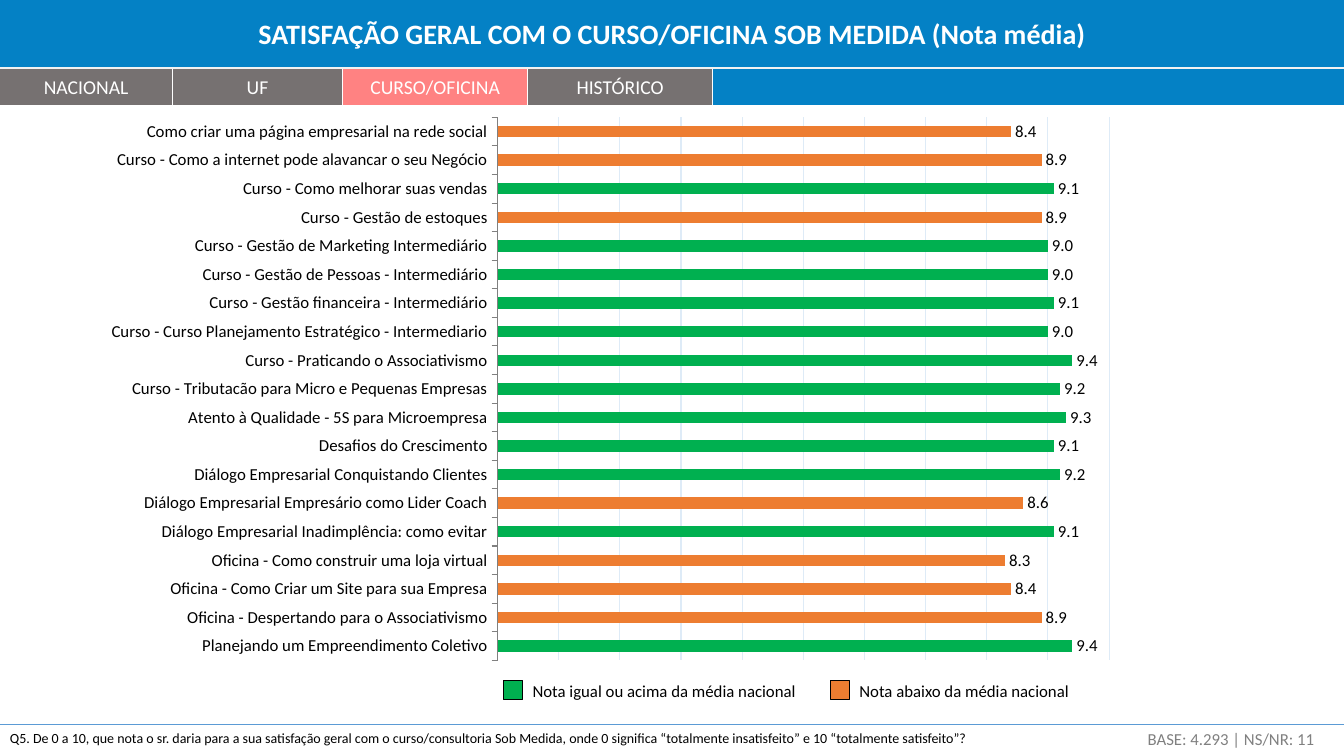
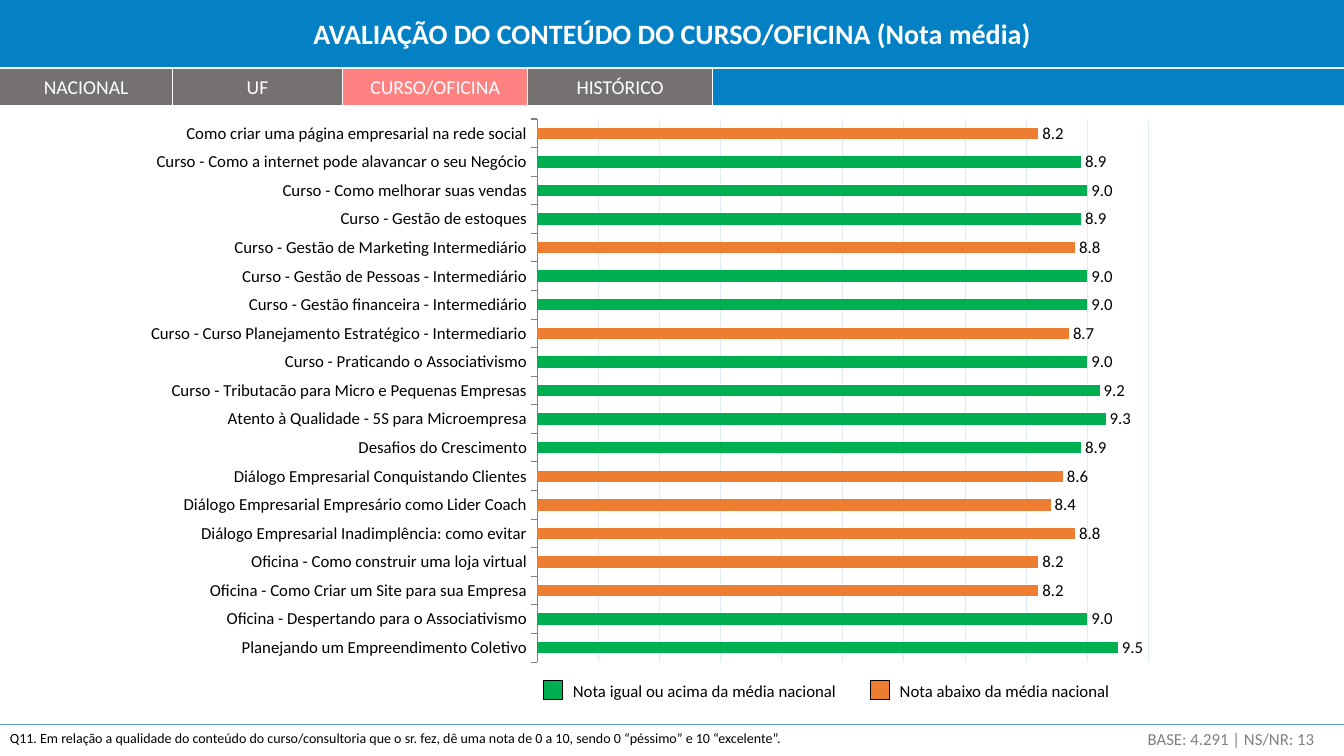
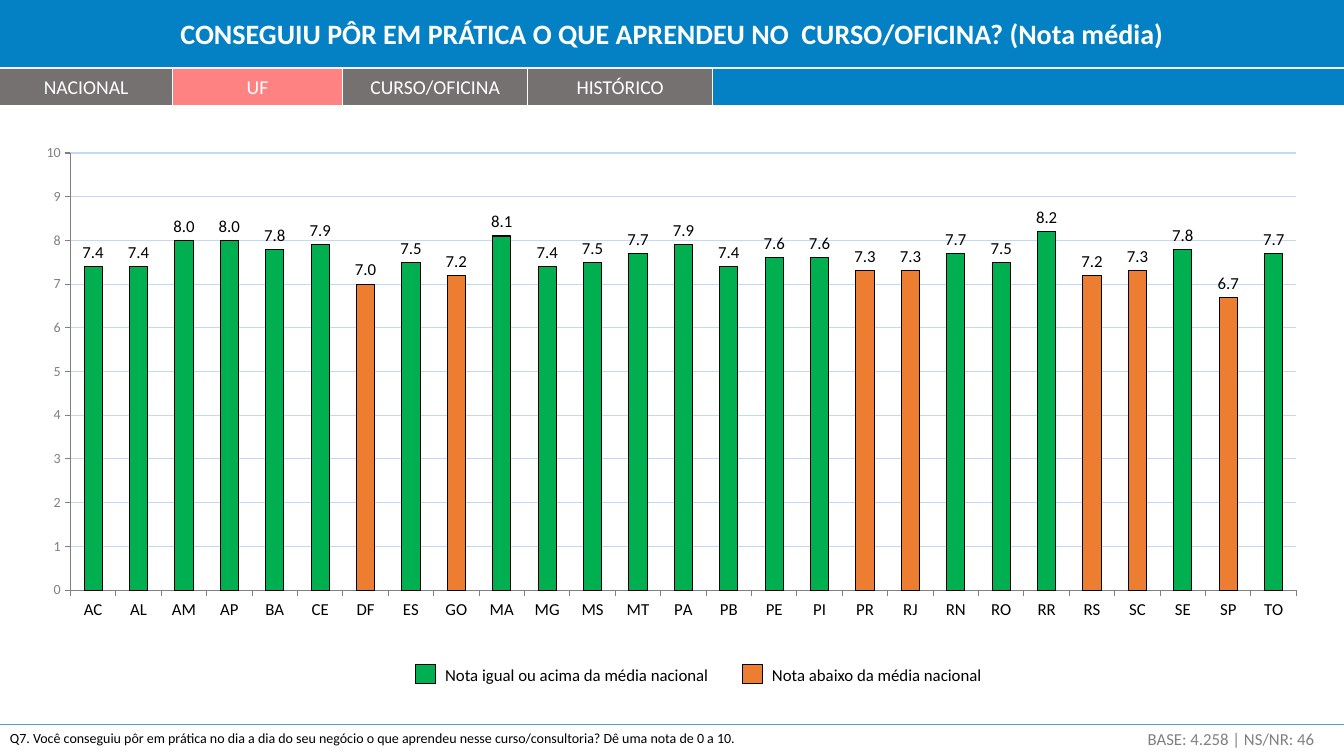
from dataclasses import dataclass

from lxml import etree
from pptx import Presentation, util as u
from pptx.chart.data import CategoryChartData
from pptx.dml.color import RGBColor
from pptx.enum import chart as ch, shapes, text
from pptx.oxml import parse_xml
from pptx.oxml.ns import nsdecls, qn


@dataclass(frozen=True)
class Theme:
    font: str = "Calibri"
    white: str = "FFFFFF"
    black: str = "000000"
    band: str = "0481C5"
    tab: str = "767171"
    active_tab: str = "FF8282"
    band_rule: str = "F2F2F2"
    footer_rule: str = "5B9BD5"
    muted: str = "808080"
    above: str = "00B050"
    below: str = "ED7D31"
    pale_grid: str = "DEEBF7"
    blue_grid: str = "C2D8F8"
    title_size: int = 20
    tab_size: int = 14
    body_size: int = 12
    note_size: int = 10


T = Theme()

# The slide is a grid of 160 columns by 90 rows of square cells.
COLS, ROWS = 160, 90
SLIDE_WIDTH, SLIDE_HEIGHT = u.Inches(13.33), u.Inches(7.5)
CELL = SLIDE_HEIGHT / ROWS

BAND_ROWS, TAB_TOP = 12.5, 8.1
TAB_EDGES = [0, 20.5, 40.8, 62.8, 84.8]
TABS = ["NACIONAL", "UF", "CURSO/OFICINA", "HISTÓRICO"]
FOOTER_TOP = 86.2
LEGEND = [("Nota igual ou acima da média nacional", T.above),
          ("Nota abaixo da média nacional", T.below)]
LEGEND_STEP, SWATCH = 38.9, 2.3

COURSES = [
    "Como criar uma página empresarial na rede social",
    "Curso - Como a internet pode alavancar o seu Negócio",
    "Curso - Como melhorar suas vendas",
    "Curso - Gestão de estoques",
    "Curso - Gestão de Marketing Intermediário",
    "Curso - Gestão de Pessoas - Intermediário",
    "Curso - Gestão financeira - Intermediário",
    "Curso - Curso Planejamento Estratégico - Intermediario",
    "Curso - Praticando o Associativismo",
    "Curso - Tributacão para Micro e Pequenas Empresas",
    "Atento à Qualidade - 5S para Microempresa",
    "Desafios do Crescimento",
    "Diálogo Empresarial Conquistando Clientes",
    "Diálogo Empresarial Empresário como Lider Coach",
    "Diálogo Empresarial Inadimplência: como evitar",
    "Oficina - Como construir uma loja virtual",
    "Oficina - Como Criar um Site para sua Empresa",
    "Oficina - Despertando para o Associativismo",
    "Planejando um Empreendimento Coletivo",
]
STATES = ("AC AL AM AP BA CE DF ES GO MA MG MS MT PA PB PE PI PR RJ RN RO RR "
          "RS SC SE SP TO").split()
SATISFACTION = [8.4, 8.9, 9.1, 8.9, 9.0, 9.0, 9.1, 9.0, 9.4, 9.2,
                9.3, 9.1, 9.2, 8.6, 9.1, 8.3, 8.4, 8.9, 9.4]
CONTENT = [8.2, 8.9, 9.0, 8.9, 8.8, 9.0, 9.0, 8.7, 9.0, 9.2,
           9.3, 8.9, 8.6, 8.4, 8.8, 8.2, 8.2, 9.0, 9.5]
PRACTICE = [7.4, 7.4, 8.0, 8.0, 7.8, 7.9, 7.0, 7.5, 7.2, 8.1, 7.4, 7.5, 7.7, 7.9,
            7.4, 7.6, 7.6, 7.3, 7.3, 7.7, 7.5, 8.2, 7.2, 7.3, 7.8, 6.7, 7.7]


def cells(*counts):
    return [u.Emu(round(n * CELL)) for n in counts]


def rgb(value):
    return RGBColor.from_string(value)


def style_font(font, size, color, bold=False):
    font.name, font.size, font.bold = T.font, u.Pt(size), bold
    font.color.rgb = rgb(color)


def style_line(line, color, width):
    line.color.rgb = rgb(color)
    line.width = u.Pt(width)


def write(shape, content, size, color, bold=False, align=text.PP_ALIGN.LEFT,
          anchor=text.MSO_ANCHOR.TOP):
    tf = shape.text_frame
    tf.text = content
    tf.word_wrap = True
    tf.auto_size = text.MSO_AUTO_SIZE.NONE
    tf.vertical_anchor = anchor
    p = tf.paragraphs[0]
    p.alignment = align
    style_font(p.runs[0].font, size, color, bold)


def add_box(s, box, fill, outline=None):
    sp = s.shapes.add_shape(shapes.MSO_SHAPE.RECTANGLE, *cells(*box))
    sp.shadow.inherit = False
    sp.fill.solid()
    sp.fill.fore_color.rgb = rgb(fill)
    if outline:
        style_line(sp.line, outline, 0.75)
    else:
        sp.line.fill.background()
    return sp


def add_label(s, box, content, size, color):
    write(s.shapes.add_textbox(*cells(*box)), content, size, color)


def add_rule(s, ends, color, width):
    rule = s.shapes.add_connector(shapes.MSO_CONNECTOR.STRAIGHT, *cells(*ends))
    style_line(rule.line, color, width)
    etree.SubElement(rule.element.spPr, qn("a:effectLst"))


def add_header(s, title, active):
    add_box(s, (0, 0, COLS, BAND_ROWS), T.band)
    for name, left, right in zip(TABS, TAB_EDGES, TAB_EDGES[1:]):
        tab = add_box(s, (left, TAB_TOP, right - left, BAND_ROWS - TAB_TOP),
                      T.active_tab if name == active else T.tab)
        write(tab, name, T.tab_size, T.white, align=text.PP_ALIGN.CENTER,
              anchor=text.MSO_ANCHOR.MIDDLE)
    for edge in TAB_EDGES[1:]:
        add_rule(s, (edge, TAB_TOP, edge, BAND_ROWS), T.white, 0.5)
    add_rule(s, (0, TAB_TOP, COLS, TAB_TOP), T.band_rule, 1)

    heading = s.shapes.title
    heading.left, heading.top, heading.width, heading.height = cells(0, 1.4, COLS, 5.3)
    write(heading, title, T.title_size, T.white, bold=True, align=text.PP_ALIGN.CENTER)
    heading.element.getparent().append(heading.element)  # bring in front of the band


def add_footer(s, question, base):
    add_rule(s, (0, FOOTER_TOP, COLS, FOOTER_TOP), T.footer_rule, 0.5)
    add_label(s, (0, FOOTER_TOP, 135, 3.2), question, T.note_size, T.black)
    add_label(s, (135.4, FOOTER_TOP, 24.4, 3.6), base, T.body_size, T.muted)


def add_legend(s, left, top):
    for i, (label, color) in enumerate(LEGEND):
        x = left + i * LEGEND_STEP
        add_box(s, (x, top, SWATCH, SWATCH), color, T.black)
        add_label(s, (x + SWATCH, top - 0.6, 36, 3.6), label, T.body_size, T.black)


def place_plot(chart, area):
    """Fix the inner plot area, given as shares of the chart."""
    places = "".join(f'<c:{tag} val="{value}"/>' for tag, value in zip("xywh", area))
    layout = parse_xml(
        f'<c:layout {nsdecls("c")}><c:manualLayout><c:layoutTarget val="inner"/>'
        f'<c:xMode val="edge"/><c:yMode val="edge"/>{places}'
        '</c:manualLayout></c:layout>')
    plot_area = chart.element.find(".//" + qn("c:plotArea"))
    for old in plot_area.findall(qn("c:layout")):
        plot_area.remove(old)
    plot_area.insert(0, layout)


def add_score_chart(s, kind, box, area, names, scores, cutoff, grid, outline=None):
    """Chart the scores, with those under the cutoff in the second colour."""
    data = CategoryChartData()
    data.categories = names
    data.add_series("Nota média", scores)
    chart = s.shapes.add_chart(kind, *cells(*box), data).chart
    chart.has_legend = chart.has_title = False
    style_font(chart.font, T.body_size, T.black)
    place_plot(chart, area)

    plot = chart.plots[0]
    plot.gap_width = 150
    plot.vary_by_categories = False
    plot.has_data_labels = True
    labels = plot.data_labels
    labels.show_value = True
    labels.number_format, labels.number_format_is_linked = "####.0", False
    labels.position = ch.XL_LABEL_POSITION.OUTSIDE_END
    style_font(labels.font, T.body_size, T.black)

    series = plot.series[0]
    series.invert_if_negative = False
    low = [i for i, score in enumerate(scores) if score < cutoff]
    formats = [(series.format, T.above)]
    formats += [(series.points[i].format, T.below) for i in low]
    for fmt, color in formats:
        fmt.fill.solid()
        fmt.fill.fore_color.rgb = rgb(color)
        if outline:
            style_line(fmt.line, outline, 0.75)

    for axis in (chart.category_axis, chart.value_axis):
        axis.major_tick_mark = ch.XL_TICK_MARK.OUTSIDE
        axis.minor_tick_mark = ch.XL_TICK_MARK.NONE
        style_line(axis.format.line, T.muted, 0.75)
    style_font(chart.category_axis.tick_labels.font, T.body_size, T.black)
    axis = chart.value_axis
    axis.minimum_scale, axis.maximum_scale, axis.major_unit = 0, 10, 1
    axis.has_major_gridlines = True
    style_line(axis.major_gridlines.format.line, grid, 0.75)
    return chart


def add_course_chart(s, left, top, scores, cutoff):
    chart = add_score_chart(s, ch.XL_CHART_TYPE.BAR_CLUSTERED, (left, top, 125.9, 68.2),
                            (0.395, 0.026, 0.578, 0.948), COURSES, scores, cutoff,
                            T.pale_grid)
    chart.category_axis.reverse_order = True
    chart.value_axis.visible = False


def add_state_chart(s, scores, cutoff):
    chart = add_score_chart(s, ch.XL_CHART_TYPE.COLUMN_CLUSTERED, (2.5, 16.1, 154.9, 58.8),
                            (0.038, 0.036, 0.942, 0.885), STATES, scores, cutoff,
                            T.blue_grid, T.black)
    ticks = chart.value_axis.tick_labels
    ticks.number_format, ticks.number_format_is_linked = "#,##0", False
    style_font(ticks.font, T.note_size, T.muted)


def add_score_slide(prs, title, active, question, base):
    s = prs.slides.add_slide(prs.slide_layouts[5])
    add_header(s, title, active)
    add_footer(s, question, base)
    return s


def main():
    prs = Presentation()
    prs.slide_width, prs.slide_height = SLIDE_WIDTH, SLIDE_HEIGHT

    s = add_score_slide(
        prs, "SATISFAÇÃO GERAL COM O CURSO/OFICINA SOB MEDIDA (Nota média)",
        "CURSO/OFICINA",
        "Q5. De 0 a 10, que nota o sr. daria para a sua satisfação geral com o "
        "curso/consultoria Sob Medida, onde 0 significa “totalmente insatisfeito” "
        "e 10 “totalmente satisfeito”?",
        "BASE: 4.293 | NS/NR: 11")
    add_course_chart(s, 9.5, 12.2, SATISFACTION, 9.0)
    add_legend(s, 59.9, 81)

    s = add_score_slide(
        prs, "AVALIAÇÃO DO CONTEÚDO DO CURSO/OFICINA (Nota média)",
        "CURSO/OFICINA",
        "Q11. Em relação a qualidade do conteúdo do curso/consultoria que o sr. fez, "
        "dê uma nota de 0 a 10, sendo 0 “péssimo” e 10 “excelente”.",
        "BASE: 4.291 | NS/NR: 13")
    add_course_chart(s, 14.2, 12.4, CONTENT, 8.9)
    add_legend(s, 64.7, 81)

    s = add_score_slide(
        prs, "CONSEGUIU PÔR EM PRÁTICA O QUE APRENDEU NO  CURSO/OFICINA? (Nota média)",
        "UF",
        "Q7. Você conseguiu pôr em prática no dia a dia do seu negócio o que aprendeu "
        "nesse curso/consultoria? Dê uma nota de 0 a 10.",
        "BASE: 4.258 | NS/NR: 46")
    add_state_chart(s, PRACTICE, 7.4)
    add_legend(s, 49.5, 79.1)

    prs.save("out.pptx")


if __name__ == "__main__":
    main()
